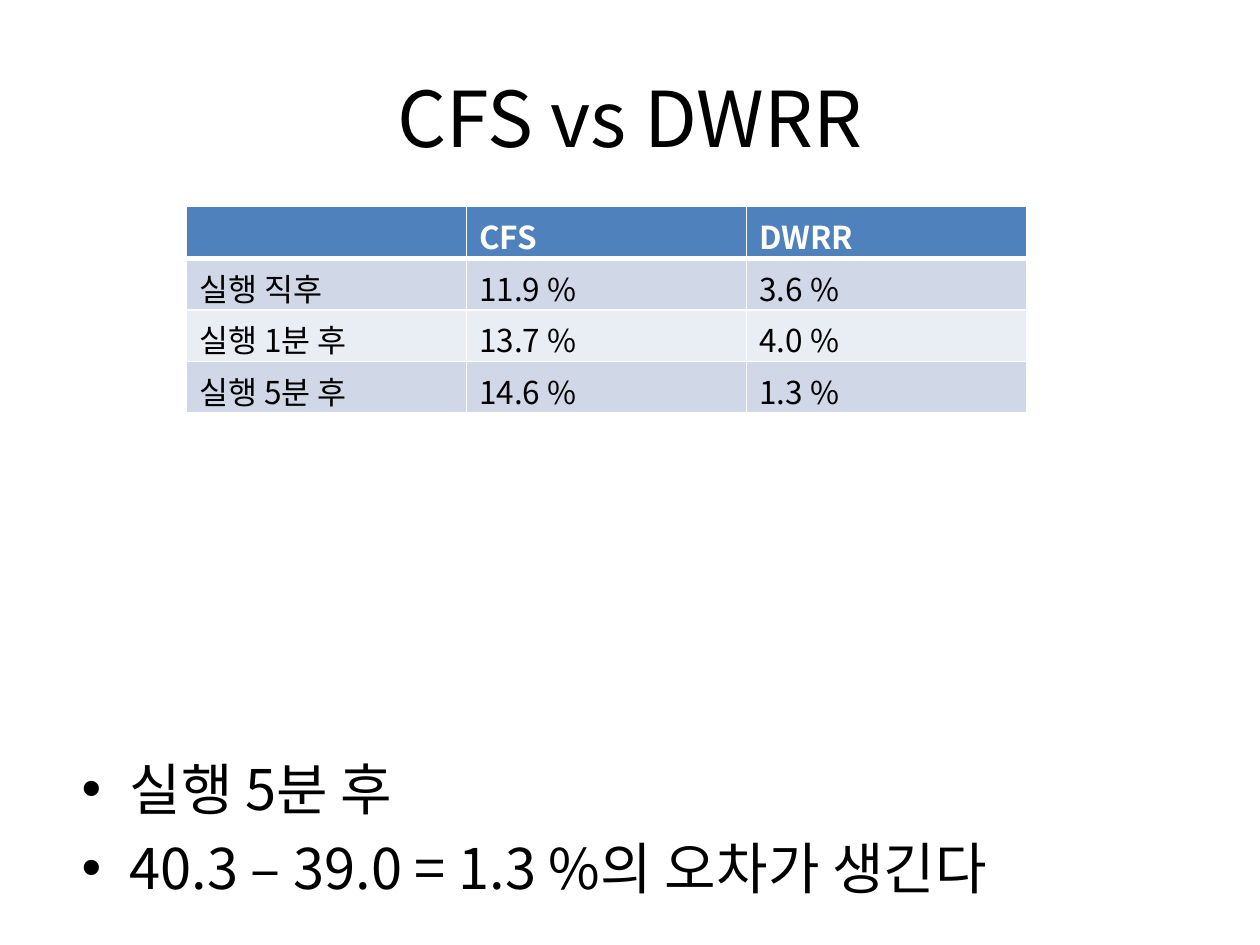
from dataclasses import dataclass

from lxml import etree
from pptx import Presentation
from pptx import util as u
from pptx.dml.color import RGBColor
from pptx.enum import text
from pptx.oxml import ns


@dataclass(frozen=True)
class Theme:
    font: str = "Noto Sans CJK KR"
    ink: str = "000000"
    paper: str = "FFFFFF"
    header: str = "4F81BD"
    bands: tuple = ("D0D8E8", "E9EDF4")
    title_size: int = 44
    body_size: int = 32
    table_size: int = 18
    rule: int = 1
    header_rule: int = 3


def write(paragraph, wording, *, theme, size, color, bold=False, align=None, before=0):
    """Add one formatted run to a paragraph."""
    paragraph.alignment = align
    paragraph.space_before = u.Pt(before)
    run = paragraph.add_run()
    run.text = wording
    font = run.font
    font.name, font.size, font.bold = theme.font, u.Pt(size), bold
    font.color.rgb = RGBColor.from_string(color)
    etree.SubElement(run._r.get_or_add_rPr(), ns.qn("a:ea"), typeface=theme.font)


class SlideBuilder:
    """Hold the theme and the current slide, and add each kind of element."""

    def __init__(self, deck, theme):
        self.theme = theme
        self.slide = deck.slides.add_slide(deck.slide_layouts[5])

    def title(self, wording, left, top, width, height):
        heading = self.slide.shapes.title
        heading.left, heading.top = u.Inches(left), u.Inches(top)
        heading.width, heading.height = u.Inches(width), u.Inches(height)
        heading.text_frame.vertical_anchor = text.MSO_ANCHOR.MIDDLE
        write(heading.text_frame.paragraphs[0], wording, theme=self.theme,
              size=self.theme.title_size, color=self.theme.ink,
              align=text.PP_ALIGN.CENTER)

    def bullets(self, points, left, top, width, height, indent=0.38):
        frame = self.slide.shapes.add_textbox(
            u.Inches(left), u.Inches(top), u.Inches(width), u.Inches(height)).text_frame
        frame.word_wrap = True
        size = self.theme.body_size
        for index, point in enumerate(points):
            paragraph = frame.add_paragraph() if index else frame.paragraphs[0]
            write(paragraph, point, theme=self.theme, size=size,
                  color=self.theme.ink, before=size * 0.2)
            properties = paragraph._p.get_or_add_pPr()
            properties.set("marL", str(u.Inches(indent)))
            properties.set("indent", str(-u.Inches(indent)))
            etree.SubElement(properties, ns.qn("a:buFont"), typeface="Arial")
            etree.SubElement(properties, ns.qn("a:buChar"), char="•")

    def borders(self, cell, top, bottom):
        rule = self.theme.rule
        for side, points in (("L", rule), ("R", rule), ("T", top), ("B", bottom)):
            line = etree.SubElement(cell._tc.get_or_add_tcPr(), ns.qn(f"a:ln{side}"),
                                    w=str(u.Pt(points)))
            fill = etree.SubElement(line, ns.qn("a:solidFill"))
            etree.SubElement(fill, ns.qn("a:srgbClr"), val=self.theme.paper)

    def table(self, rows, left, top, width, row_height):
        theme = self.theme
        grid = self.slide.shapes.add_table(
            len(rows), len(rows[0]), u.Inches(left), u.Inches(top),
            u.Inches(width), u.Inches(row_height * len(rows))).table
        for r, row in enumerate(rows):
            is_header = r == 0
            band = theme.header if is_header else theme.bands[(r - 1) % 2]
            for c, wording in enumerate(row):
                cell = grid.cell(r, c)
                self.borders(cell,
                             top=theme.header_rule if r == 1 else theme.rule,
                             bottom=theme.header_rule if is_header else theme.rule)
                cell.fill.solid()
                cell.fill.fore_color.rgb = RGBColor.from_string(band)
                if wording:
                    write(cell.text_frame.paragraphs[0], wording, theme=theme,
                          size=theme.table_size, bold=is_header,
                          color=theme.paper if is_header else theme.ink)


def main():
    deck = Presentation()
    deck.slide_width, deck.slide_height = u.Inches(10), u.Inches(7.5)
    comparison = SlideBuilder(deck, Theme())
    comparison.title("CFS vs DWRR", 0.5, 0.3, 9, 1.25)
    comparison.bullets(["실행 5분 후", "40.3 – 39.0 = 1.3 %의 오차가 생긴다"],
                       0.55, 5.94, 8.95, 1.17)
    comparison.table([
        ("", "CFS", "DWRR"),
        ("실행 직후", "11.9 %", "3.6 %"),
        ("실행 1분 후", "13.7 %", "4.0 %"),
        ("실행 5분 후", "14.6 %", "1.3 %"),
    ], 1.48, 1.64, 6.67, 0.41)
    deck.save("out.pptx")


if __name__ == "__main__":
    main()
